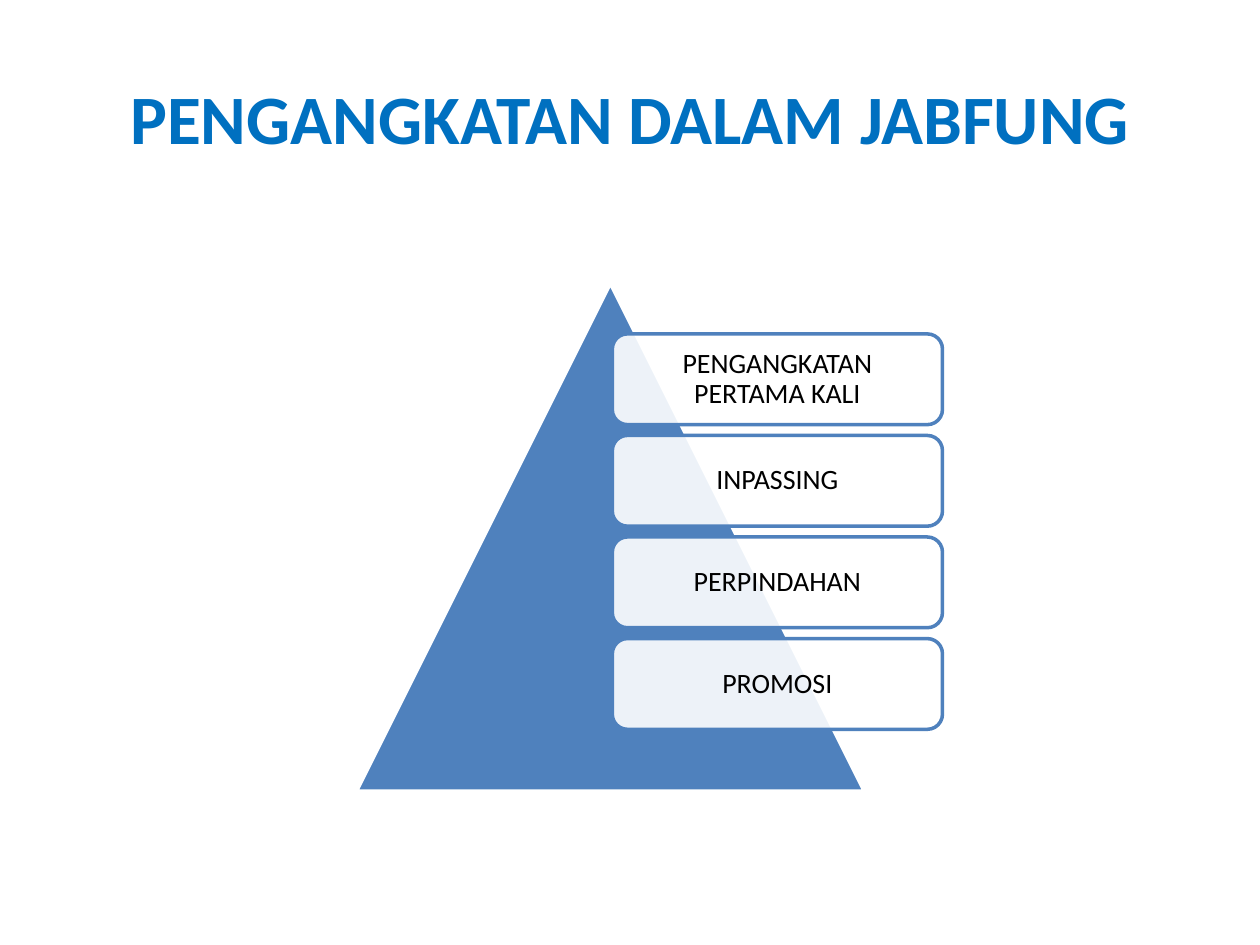
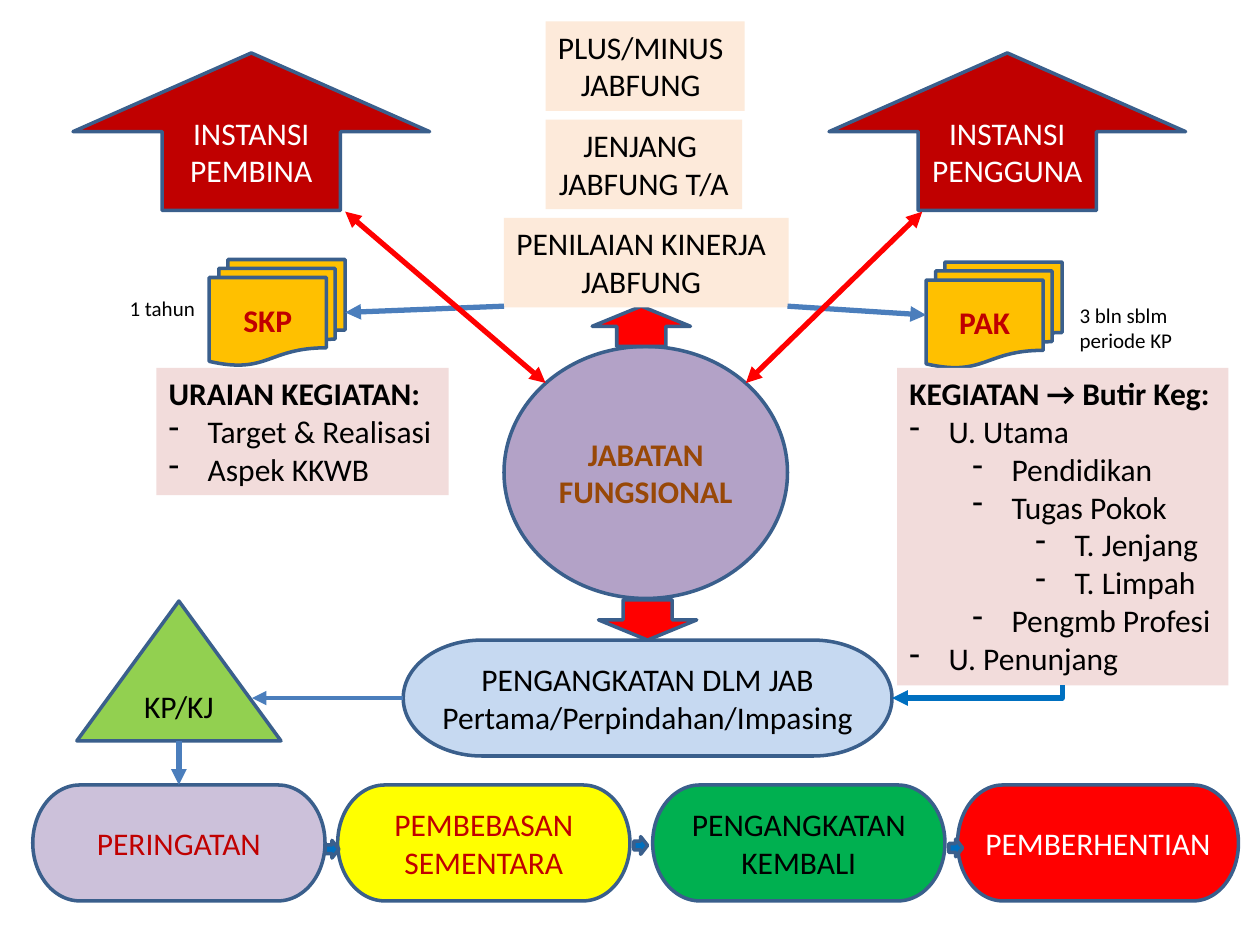
from lxml import etree
from pptx import Presentation
from pptx.dml.color import RGBColor
from pptx.enum import shapes, text
from pptx.oxml import ns
from pptx.util import Inches, Pt

FONT = "Calibri"
BLACK = RGBColor(0, 0, 0)
WHITE = RGBColor(0xFF, 0xFF, 0xFF)
TITLE_BLUE = RGBColor(0x00, 0x70, 0xC0)
BLUE = RGBColor(0x4F, 0x81, 0xBD)
LINK_BLUE = RGBColor(0x4B, 0x7E, 0xBC)
OUTLINE = RGBColor(0x3A, 0x5F, 0x8C)
PALE_BLUE = RGBColor(0xC6, 0xD9, 0xF1)
PURPLE = RGBColor(0xB3, 0xA2, 0xC7)
PALE_PURPLE = RGBColor(0xCC, 0xC1, 0xDA)
BROWN = RGBColor(0x98, 0x48, 0x07)
DARK_RED = RGBColor(0xC0, 0, 0)
RED = RGBColor(0xFF, 0, 0)
PEACH = RGBColor(0xFD, 0xEA, 0xDA)
PINK = RGBColor(0xF2, 0xDC, 0xDB)
AMBER = RGBColor(0xFF, 0xC0, 0)
YELLOW = RGBColor(0xFF, 0xFF, 0)
GREEN = RGBColor(0, 0xB0, 0x50)
LIME = RGBColor(0x92, 0xD0, 0x50)

KIND = shapes.MSO_SHAPE
LEFT, CENTER = text.PP_ALIGN.LEFT, text.PP_ALIGN.CENTER


def style(p, size, color, bold=False, align=CENTER):
    p.alignment = align
    p.font.name = FONT
    p.font.size = Pt(size)
    p.font.color.rgb = color
    p.font.bold = bold


def add_shape(s, kind, box, fill, line=OUTLINE, label="", color=BLACK,
              bold=False, size=18):
    sp = s.shapes.add_shape(kind, *map(Inches, box))
    sp.shadow.inherit = False
    sp.fill.solid()
    sp.fill.fore_color.rgb = fill
    sp.line.color.rgb = line
    sp.line.width = Pt(2)
    if label:
        tf = sp.text_frame
        tf.word_wrap = True
        tf.vertical_anchor = text.MSO_ANCHOR.MIDDLE
        tf.text = label
        style(tf.paragraphs[0], size, color, bold)
    return sp


def add_note(s, box, lines, fill=None, size=18):
    sp = s.shapes.add_textbox(*map(Inches, box))
    if fill is not None:
        sp.fill.solid()
        sp.fill.fore_color.rgb = fill
    tf = sp.text_frame
    tf.word_wrap = False
    tf.auto_size = text.MSO_AUTO_SIZE.SHAPE_TO_FIT_TEXT
    for i, (line, align) in enumerate(lines):
        p = tf.paragraphs[0] if i == 0 else tf.add_paragraph()
        p.text = line
        style(p, size, BLACK, align=align)
    return sp


def add_outline(s, box, heading, items):
    lines = [(heading, LEFT)] + [(item, LEFT) for _, item in items]
    tf = add_note(s, box, lines, PINK).text_frame
    tf.paragraphs[0].font.bold = True
    for p, (level, _) in zip(tf.paragraphs[1:], items):
        p.level = level
        pPr = p._p.get_or_add_pPr()
        pPr.set("marL", str(Inches(0.31 + 0.5 * level)))
        pPr.set("indent", str(Inches(-0.31)))
        bullet = etree.Element(ns.qn("a:buChar"), char="-")
        pPr.insert(0, bullet)


def add_link(s, start, end, color, width=3, both=False,
             kind=shapes.MSO_CONNECTOR.STRAIGHT):
    c = s.shapes.add_connector(kind, *map(Inches, start + end))
    c.line.color.rgb = color
    c.line.width = Pt(width)
    ln = c.line._get_or_add_ln()
    for end_tag in ["a:headEnd", "a:tailEnd"] if both else ["a:tailEnd"]:
        etree.SubElement(ln, ns.qn(end_tag), type="triangle")
    etree.SubElement(c._element.spPr, ns.qn("a:effectLst"))
    return c


def add_title(s, box, title):
    tf = s.shapes.add_textbox(*map(Inches, box)).text_frame
    tf.word_wrap = True
    tf.vertical_anchor = text.MSO_ANCHOR.MIDDLE
    tf.text = title
    style(tf.paragraphs[0], 39.6, TITLE_BLUE, bold=True)


def add_pyramid(s, x, y, side, labels):
    add_shape(s, KIND.ISOSCELES_TRIANGLE, (x, y, side, side), BLUE, WHITE)
    for i, label in enumerate(labels):
        box = (x + 2.03, y + 0.4 + 0.806 * i, 2.62, 0.72)
        sp = add_shape(s, KIND.ROUNDED_RECTANGLE, box, WHITE, BLUE, label, size=16)
        color = sp.fill._xPr.find(".//" + ns.qn("a:srgbClr"))
        etree.SubElement(color, ns.qn("a:alpha"), val="90000")
        tf = sp.text_frame
        tf.margin_left = tf.margin_right = Inches(0.11)
        tf.margin_top = tf.margin_bottom = Inches(0.11)
        tf.paragraphs[0].line_spacing = 0.9


def add_agencies(s, x, y):
    for i, name in enumerate(["INSTANSI PEMBINA", "INSTANSI PENGGUNA"]):
        add_shape(s, KIND.UP_ARROW, (x + 6 * i, y, 2.83, 1.25), DARK_RED,
                  label=name, color=WHITE)


def add_topics(s, x, y):
    topics = [
        (0.33, 1.58, "PLUS/MINUS", LEFT, "JABFUNG"),
        (0.33, 1.56, "JENJANG ", CENTER, "JABFUNG T/A"),
        (0, 2.26, "PENILAIAN KINERJA", LEFT, "JABFUNG"),
    ]
    for i, (dx, w, first, align, second) in enumerate(topics):
        add_note(s, (x + dx, y + 0.78 * i, w, 0.71),
                 [(first, align), (second, CENTER)], PEACH)


def add_hub(s, x, y, w, h):
    add_shape(s, KIND.OVAL, (x, y, w, h), PURPLE,
              label="JABATAN FUNGSIONAL", color=BROWN, bold=True)
    add_shape(s, KIND.UP_ARROW, (x + 0.7, y - 0.32, 0.78, 0.32), RED)
    add_shape(s, KIND.DOWN_ARROW, (x + 0.75, y + h + 0.01, 0.78, 0.32), RED)


def add_document(s, x, y, label):
    return add_shape(s, KIND.FLOWCHART_MULTIDOCUMENT, (x, y, 1.08, 0.84), AMBER,
                     label=label, color=DARK_RED, bold=True)


def add_performance_plan(s, x, y):
    document = add_document(s, x + 0.42, y, "SKP")
    add_outline(s, (x, y + 0.86, 2.32, 1.01), "URAIAN KEGIATAN:",
                [(0, "Target & Realisasi"), (0, "Aspek KKWB")])
    add_note(s, (x - 0.31, y + 0.24, 0.72, 0.3), [("1 tahun", LEFT)], size=12)
    return document


def add_credit_score(s, x, y):
    document = add_document(s, x + 0.23, y, "PAK")
    activities = [
        (0, "U. Utama"), (1, "Pendidikan"), (1, "Tugas Pokok"),
        (2, "T. Jenjang"), (2, "T. Limpah"), (1, "Pengmb Profesi"),
        (0, "U. Penunjang"),
    ]
    add_outline(s, (x, y + 0.84, 2.63, 2.52), "KEGIATAN → Butir Keg:", activities)
    add_note(s, (x + 1.35, y + 0.27, 0.95, 0.5),
             [("3 bln sblm", LEFT), ("periode KP", LEFT)], size=12)
    return document


def add_stages(s, x, y):
    stages = [
        (0, 2.32, PALE_PURPLE, "PERINGATAN", DARK_RED),
        (2.42, 2.32, YELLOW, "PEMBEBASAN SEMENTARA", DARK_RED),
        (4.92, 2.32, GREEN, "PENGANGKATAN KEMBALI", BLACK),
        (7.34, 2.23, RED, "PEMBERHENTIAN", WHITE),
    ]
    boxes = [add_shape(s, KIND.FLOWCHART_TERMINATOR, (x + dx, y, w, 0.92), fill,
                       label=label, color=color)
             for dx, w, fill, label, color in stages]
    for dx, dy in [(2.32, 0.44), (4.77, 0.41), (7.27, 0.43)]:
        add_shape(s, KIND.RIGHT_ARROW, (x + dx, y + dy, 0.11, 0.14), TITLE_BLUE)
    return boxes[0]


def add_appointment(s, x, y, first_stage):
    appointment = add_shape(
        s, KIND.FLOWCHART_TERMINATOR, (x + 2.59, y + 0.31, 3.88, 0.92), PALE_BLUE,
        label="PENGANGKATAN DLM JAB Pertama/Perpindahan/Impasing")
    promotion = add_shape(s, KIND.FLOWCHART_EXTRACT, (x, y, 1.62, 1.11), LIME,
                          label="KP/KJ")
    c = add_link(s, (x + 2.59, y + 0.77), (x + 1.39, y + 0.77), LINK_BLUE, 2.75)
    c.begin_connect(appointment, 1)
    c = add_link(s, (x + 0.81, y + 1.11), (x + 0.81, y + 1.46), LINK_BLUE)
    c.begin_connect(promotion, 2)
    c.end_connect(first_stage, 0)


def add_elbow(s, x, y, w, h):
    mid_x, mid_y = x + w / 2, y + h / 2
    c = add_link(s, (mid_x - h / 2, mid_y - w / 2), (mid_x + h / 2, mid_y + w / 2),
                 TITLE_BLUE, kind=shapes.MSO_CONNECTOR.ELBOW)
    spPr = c._element.spPr
    spPr.find(ns.qn("a:xfrm")).set("rot", "5400000")
    spPr.find(ns.qn("a:prstGeom")).set("prst", "bentConnector2")


def build_appointment_types(prs):
    s = prs.slides.add_slide(prs.slide_layouts[6])
    add_title(s, (0.5, 0.3, 9, 1.25), "PENGANGKATAN DALAM JABFUNG")
    add_pyramid(s, 2.83, 2.25, 4.03,
                ["PENGANGKATAN PERTAMA KALI", "INPASSING", "PERPINDAHAN", "PROMOSI"])


def build_career_map(prs):
    s = prs.slides.add_slide(prs.slide_layouts[6])
    add_hub(s, 4, 2.75, 2.25, 2)
    add_agencies(s, 0.58, 0.42)
    add_topics(s, 4, 0.17)
    plan = add_performance_plan(s, 1.24, 2.06)
    score = add_credit_score(s, 7.12, 2.08)
    add_link(s, (4, 2.43), (2.74, 2.48), LINK_BLUE).end_connect(plan, 3)
    add_link(s, (6.25, 2.43), (7.35, 2.5), LINK_BLUE).end_connect(score, 1)
    first_stage = add_stages(s, 0.26, 6.23)
    add_appointment(s, 0.61, 4.77, first_stage)
    add_link(s, (2.74, 1.68), (4.33, 3.04), RED, both=True)
    add_link(s, (7.32, 1.68), (5.92, 3.04), RED, both=True)
    add_elbow(s, 7.08, 5.44, 1.35, 0.1)


def main():
    prs = Presentation()
    prs.slide_width, prs.slide_height = Inches(10), Inches(7.5)
    build_appointment_types(prs)
    build_career_map(prs)
    prs.save("out.pptx")


if __name__ == "__main__":
    main()
